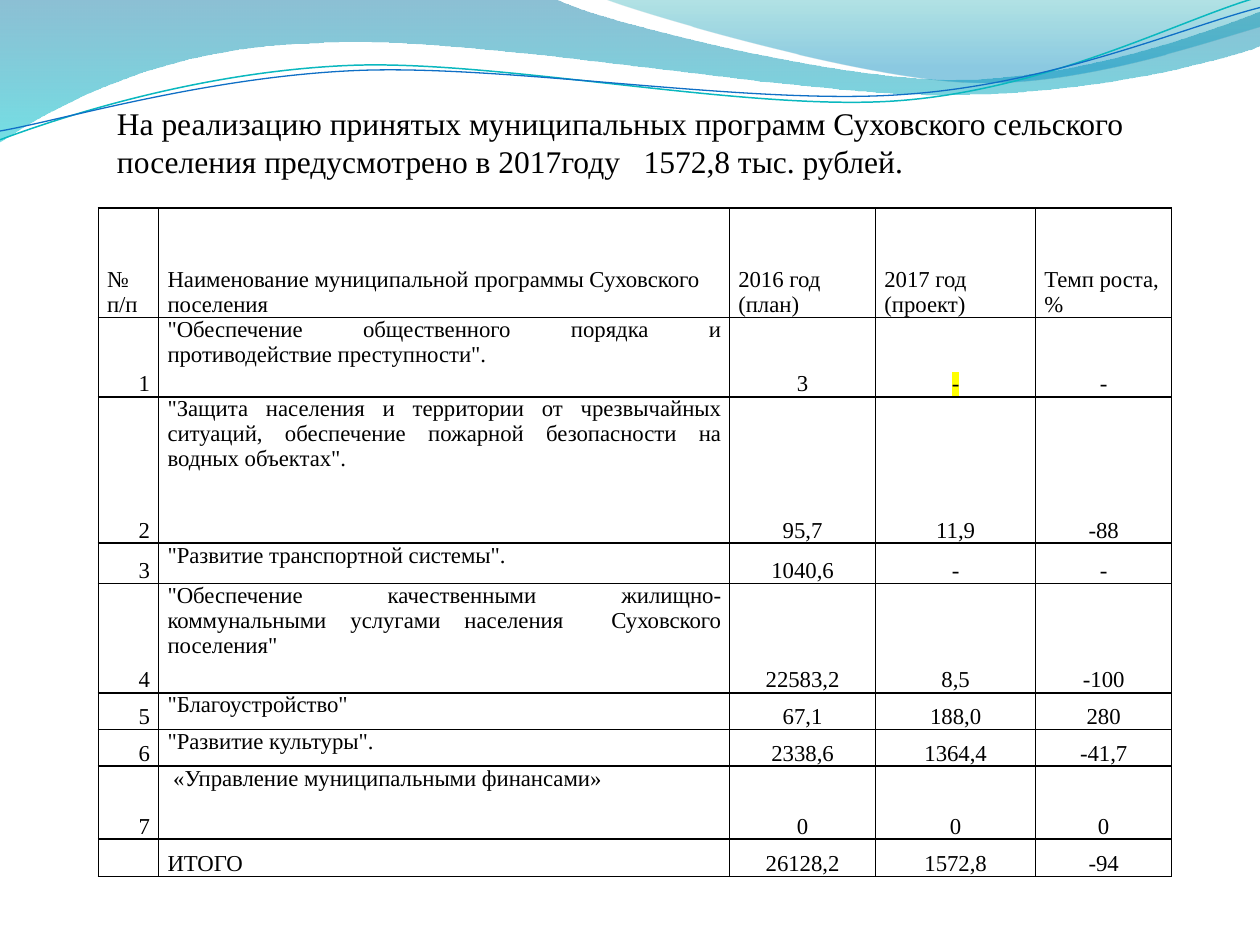
from lxml.etree import SubElement
from pptx import Presentation
from pptx.dml.color import RGBColor
from pptx.enum.text import MSO_ANCHOR, MSO_AUTO_SIZE, PP_ALIGN
from pptx.oxml.ns import qn
from pptx.util import Inches, Pt

FONT = "Times New Roman"
COLORS = {
    "text": "000000", "border": "000000", "highlight": "FFFF00",
    "blue": "0074A1", "cyan": "00C6CF", "teal": "00A1A9", "sky": "008BBF",
    "teal line": "0AB8BF", "blue line": "0F6FC6",
}
TITLE = ("На реализацию принятых муниципальных программ Суховского сельского "
         "поселения предусмотрено в 2017году   1572,8 тыс. рублей.")
ROWS = [
    ("№ п/п", "Наименование муниципальной программы Суховского поселения",
     "2016 год (план)", "2017 год (проект)", "Темп роста,%"),
    ("1", '"Обеспечение общественного порядка и противодействие преступности". ',
     "3", "-", "-"),
    ("2", '"Защита населения и территории от чрезвычайных ситуаций, '
          'обеспечение пожарной безопасности на водных объектах".',
     "95,7", "11,9", "-88"),
    ("3", '"Развитие транспортной системы". ', "1040,6", "-", "-"),
    ("4", '"Обеспечение качественными жилищно-коммунальными услугами '
          'населения  Суховского поселения"', "22583,2", "8,5", "-100"),
    ("5", '"Благоустройство"', "67,1", "188,0", "280"),
    ("6", '"Развитие культуры". ', "2338,6", "1364,4", "-41,7"),
    ("7", " «Управление муниципальными финансами»", "0", "0", "0"),
    ("", "ИТОГО", "26128,2", "1572,8", "-94"),
]
COLUMN_WIDTHS = [0.48, 4.53, 1.16, 1.27, 1.08]
ROW_HEIGHTS = [0.87, 0.63, 1.16, 0.32, 0.87, 0.29, 0.29, 0.58, 0.3]
HIGHLIGHTED = (1, 3)

WAVES = [
    {"start": (0, 0), "stops": [(0, "blue", 45), (1, "cyan", 55)], "steps": [
        [(4.4, -0.01)], [(4.76, 0.17), (6.64, 0.63), (7.58, 0.63)],
        [(8.53, 0.63), (9.58, 0.26), (10, 0.09)], [(10.01, 0.36)],
        [(9.83, 0.44), (8.7, 0.76), (7.46, 0.75)],
        [(6.22, 0.75), (3.82, 0.28), (2.57, 0.34)],
        [(1.29, 0.36), (0.46, 0.83), (-0.01, 1.13)], [(0, 0)]]},
    {"start": (4.79, -0.01), "stops": [(0, "teal", 30), (0.8, "sky", 45)], "steps": [
        [(5.09, 0.11), (6.82, 0.62), (7.69, 0.65)],
        [(8.56, 0.69), (9.61, 0.32), (10, 0.21)], [(10, 0)], [(4.79, -0.01)]]},
    {"start": (0, 1.11), "line": ("teal line", 0.85), "steps": [
        [(0.48, 0.93), (1.58, 0.57), (2.77, 0.52)],
        [(3.95, 0.47), (5.93, 0.89), (7.13, 0.8)],
        [(8.33, 0.71), (9.38, 0.15), (9.98, -0.02)]]},
    {"start": (0, 1.04), "line": ("blue line", 0.75), "steps": [
        [(0.47, 0.96), (1.64, 0.61), (2.83, 0.56)],
        [(4.03, 0.51), (5.97, 0.84), (7.17, 0.75)],
        [(8.36, 0.67), (9.41, 0.21), (10, 0.06)]]},
]


def color(name):
    return RGBColor.from_string(COLORS[name])


def in_emu(point):
    return Inches(point[0]), Inches(point[1])


def bend_segments(shape, steps):
    segments = list(shape.element.spPr.iter(qn("a:lnTo")))
    for segment, step in zip(segments, steps):
        if len(step) == 1:
            continue
        curve = SubElement(segment.getparent(), qn("a:cubicBezTo"))
        for x, y in map(in_emu, step):
            SubElement(curve, qn("a:pt"), x=str(x - shape.left), y=str(y - shape.top))
        segment.getparent().replace(segment, curve)


def add_wave(page, wave):
    builder = page.shapes.build_freeform(*in_emu(wave["start"]), scale=1.0)
    builder.add_line_segments([in_emu(step[-1]) for step in wave["steps"]],
                              close="stops" in wave)
    shape = builder.convert_to_shape()
    bend_segments(shape, wave["steps"])
    shape.shadow.inherit = False
    if "line" in wave:
        name, width = wave["line"]
        shape.fill.background()
        shape.line.color.rgb = color(name)
        shape.line.width = Pt(width)
        return
    shape.line.fill.background()
    shape.fill.gradient()
    shape.fill.gradient_angle = 270
    for stop, (position, name, opacity) in zip(shape.fill.gradient_stops, wave["stops"]):
        stop.position = position
        stop.color.rgb = color(name)
    tones = shape.element.spPr.find(qn("a:gradFill")).iter(qn("a:srgbClr"))
    for tone, (position, name, opacity) in zip(tones, wave["stops"]):
        SubElement(tone, qn("a:alpha"), val=str(opacity * 1000))


def style_text(paragraph, size):
    for span in paragraph.runs:
        span.font.size = Pt(size)
        span.font.name = FONT
        span.font.color.rgb = color("text")


def add_borders(cell):
    properties = cell._tc.get_or_add_tcPr()
    for position, side in enumerate(("lnL", "lnR", "lnT", "lnB")):
        line = SubElement(properties, qn("a:" + side), w=str(Pt(1)))
        fill = SubElement(line, qn("a:solidFill"))
        SubElement(fill, qn("a:srgbClr"), val=COLORS["border"])
        properties.insert(position, line)


def alignment(row, column):
    if row == 0:
        return PP_ALIGN.LEFT
    if column == 0:
        return PP_ALIGN.RIGHT
    if column == 1:
        return PP_ALIGN.LEFT if row == len(ROWS) - 1 else PP_ALIGN.JUSTIFY
    return PP_ALIGN.CENTER


def fill_cell(cell, row, column, text):
    cell.fill.background()
    cell.margin_left = cell.margin_right = Inches(0.07)
    cell.margin_top = cell.margin_bottom = 0
    align = alignment(row, column)
    cell.vertical_anchor = MSO_ANCHOR.TOP if align == PP_ALIGN.JUSTIFY else MSO_ANCHOR.BOTTOM
    add_borders(cell)
    cell.text_frame.text = text
    paragraph = cell.text_frame.paragraphs[0]
    paragraph.alignment = align
    style_text(paragraph, 13)
    if not text:
        SubElement(paragraph._p, qn("a:endParaRPr"), sz="1300")
    if (row, column) == HIGHLIGHTED:
        properties = paragraph.runs[0]._r.get_or_add_rPr()
        highlight = SubElement(properties, qn("a:highlight"))
        SubElement(highlight, qn("a:srgbClr"), val=COLORS["highlight"])
        properties.find(qn("a:solidFill")).addnext(highlight)


def add_programs(page):
    frame = page.shapes.add_table(
        len(ROWS), len(COLUMN_WIDTHS), Inches(0.78), Inches(1.65),
        Inches(sum(COLUMN_WIDTHS)), Inches(sum(ROW_HEIGHTS)))
    table = frame.table
    table.first_row = table.horz_banding = False
    for column, width in zip(table.columns, COLUMN_WIDTHS):
        column.width = Inches(width)
    for row, height in zip(table.rows, ROW_HEIGHTS):
        row.height = Inches(height)
    for row, texts in enumerate(ROWS):
        for column, text in enumerate(texts):
            fill_cell(table.cell(row, column), row, column, text)


def add_title(page):
    box = page.shapes.add_textbox(Inches(0.83), Inches(0.78), Inches(8.35), Inches(0.71))
    frame = box.text_frame
    frame.word_wrap = True
    frame.auto_size = MSO_AUTO_SIZE.SHAPE_TO_FIT_TEXT
    frame.text = TITLE
    style_text(frame.paragraphs[0], 18)


def main():
    deck = Presentation()
    deck.slide_width, deck.slide_height = Inches(10), Inches(7.5)
    page = deck.slides.add_slide(deck.slide_layouts[6])
    for wave in WAVES:
        add_wave(page, wave)
    add_title(page)
    add_programs(page)
    deck.save("out.pptx")


if __name__ == "__main__":
    main()
